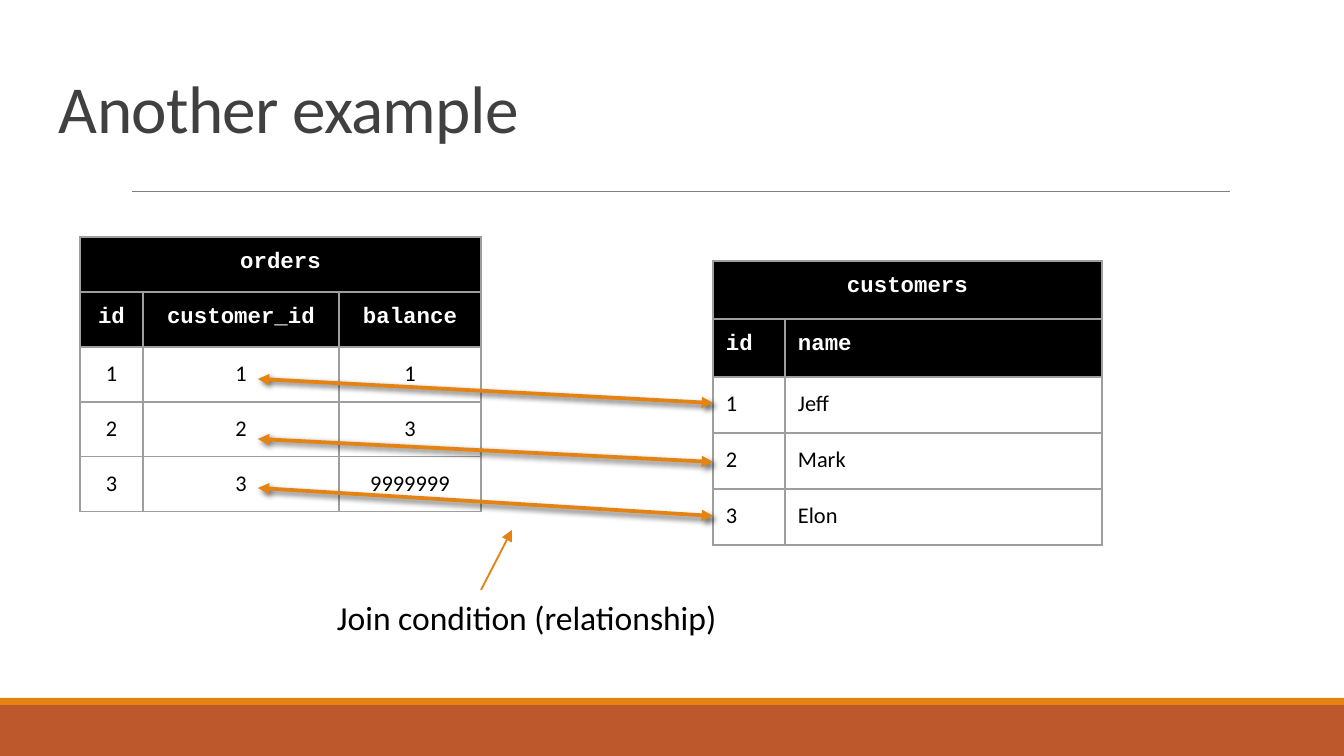
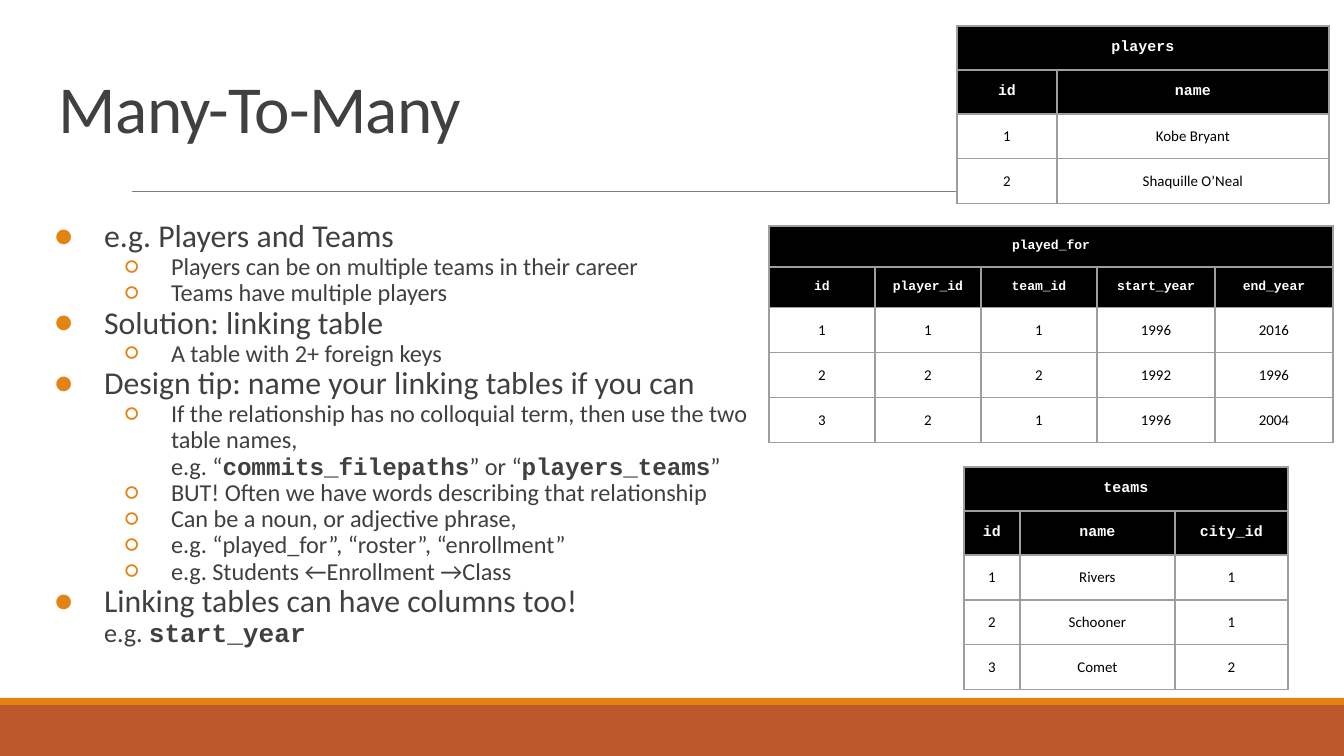
"""Build two slides on joining tables and many-to-many relationships."""
from lxml import etree
from pptx import Presentation
from pptx import util as u
from pptx.dml.color import RGBColor
from pptx.enum import shapes, text
from pptx.oxml import ns

BLACK = RGBColor(0x00, 0x00, 0x00)
WHITE = RGBColor(0xFF, 0xFF, 0xFF)
INK = RGBColor(0x40, 0x40, 0x40)
GRAY = RGBColor(0x80, 0x80, 0x80)
BORDER = RGBColor(0x9E, 0x9E, 0x9E)
ORANGE = RGBColor(0xE4, 0x83, 0x12)
RUST = RGBColor(0xBD, 0x58, 0x2C)

WIDTH, HEIGHT, INSET = 1344, 756, 13
PLAIN = {"name": "Calibri", "bold": False}
CODE = {"name": "Courier New", "bold": True}
TITLE_ONLY, TITLE_AND_BODY = 5, 1
BULLETS = [
    {"char": "●", "margin": 67, "indent": -50, "sizes": (17, 14)},
    {"char": "○", "margin": 134, "indent": -46, "sizes": (13, 13, 13)},
]


def px(length):
    return u.Emu(round(length * 914400 / 134.4))


def add(parent, tag, **attributes):
    return etree.SubElement(parent, ns.qn(tag), attributes)


def add_color(parent, color, alpha=None):
    element = add(parent, "a:srgbClr", val=str(color))
    if alpha:
        add(element, "a:alpha", val=alpha)


class Deck:
    def __init__(self):
        self.presentation = Presentation()
        self.presentation.slide_width = px(WIDTH)
        self.presentation.slide_height = px(HEIGHT)
        self.slide = None

    def place(self, shape, *box):
        for name, value in zip(("left", "top", "width", "height"), box):
            setattr(shape, name, px(value))

    def frame(self, shape, **values):
        sides = ("margin_left", "margin_right", "margin_top", "margin_bottom")
        values = {"word_wrap": True, "auto_size": text.MSO_AUTO_SIZE.NONE,
                  "vertical_anchor": text.MSO_ANCHOR.TOP,
                  **dict.fromkeys(sides, px(INSET)), **values}
        for name, value in values.items():
            setattr(shape.text_frame, name, value)
        return shape.text_frame

    def run(self, paragraph, words, style, size, color):
        run = paragraph.add_run()
        run.text = words
        for name, value in {**style, "size": u.Pt(size)}.items():
            setattr(run.font, name, value)
        run.font.color.rgb = color
        return run

    def start(self, layout, title):
        self.slide = self.presentation.slides.add_slide(
            self.presentation.slide_layouts[layout])
        self.band(705, 51, RUST)
        self.band(698, 7, ORANGE)
        self.line((132, 192), (1230, 192), GRAY, 0.5)
        shape = self.slide.shapes.title
        self.place(shape, 46, 66, 1252, 84)
        paragraph = self.frame(shape).paragraphs[0]
        paragraph.alignment = text.PP_ALIGN.LEFT
        paragraph.line_spacing = 0.85
        run = self.run(paragraph, title, PLAIN, 36, INK)
        run.font._element.set("spc", "-40")

    def band(self, top, height, color):
        shape = self.slide.shapes.add_shape(
            shapes.MSO_SHAPE.RECTANGLE, px(0), px(top), px(WIDTH), px(height))
        shape.shadow.inherit = False
        shape.fill.solid()
        shape.fill.fore_color.rgb = color
        shape.line.fill.background()

    def line(self, start, end, color, width, heads=(), shadow=False):
        connector = self.slide.shapes.add_connector(
            shapes.MSO_CONNECTOR.STRAIGHT, *map(px, start + end))
        connector.line.color.rgb = color
        connector.line.width = u.Pt(width)
        for head in heads:
            add(connector.line._get_or_add_ln(), head, type="triangle")
        effects = add(connector._element.spPr, "a:effectLst")
        if shadow:
            outer = add(effects, "a:outerShdw", blurRad=str(u.Pt(3)),
                        dist=str(u.Pt(2)), dir="2700000", rotWithShape="0")
            add_color(outer, BLACK, "60000")

    def label(self, words, *box):
        shape = self.slide.shapes.add_textbox(*map(px, box))
        frame = self.frame(shape, auto_size=text.MSO_AUTO_SIZE.SHAPE_TO_FIT_TEXT,
                           margin_top=px(7), margin_bottom=px(7))
        self.run(frame.paragraphs[0], words, PLAIN, 18, BLACK)

    def bullets(self, items, *box):
        shape = self.slide.placeholders[1]
        self.place(shape, *box)
        frame = self.frame(shape)
        for index, (level, words) in enumerate(items):
            paragraph = frame.add_paragraph() if index else frame.paragraphs[0]
            self.bullet(paragraph, level, words)

    def bullet(self, paragraph, level, words):
        style = BULLETS[level]
        paragraph.level = level
        paragraph.alignment = text.PP_ALIGN.LEFT
        paragraph.line_spacing = 0.9
        paragraph.space_before = u.Pt(0)
        properties = paragraph._p.get_or_add_pPr()
        properties.set("marL", str(px(style["margin"])))
        properties.set("indent", str(px(style["indent"])))
        add_color(add(properties, "a:buClr"), ORANGE)
        add(properties, "a:buFont", typeface="Calibri")
        add(properties, "a:buChar", char=style["char"])
        for row, (line, size) in enumerate(zip(words.split("\n"), style["sizes"])):
            if row:
                paragraph.add_line_break()
            for part, piece in enumerate(line.split("`")):
                if piece:
                    self.run(paragraph, piece, CODE if part % 2 else PLAIN, size, INK)

    def table(self, name, rows, left, top, columns, heights, sizes=(8, 8),
              align=text.PP_ALIGN.CENTER, fill=None):
        rows = [[name] + [""] * (len(columns) - 1)] + rows
        heights = [heights[0]] * 2 + [heights[1]] * (len(rows) - 2)
        shape = self.slide.shapes.add_table(
            len(rows), len(columns), px(left), px(top),
            px(sum(columns)), px(sum(heights)))
        table = shape.table
        table.first_row = table.horz_banding = False
        for column, width in zip(table.columns, columns):
            column.width = px(width)
        for index, (row, height) in enumerate(zip(rows, heights)):
            table.rows[index].height = px(height)
            for cell, words in zip(table.rows[index].cells, row):
                self.cell(cell, words, index < 2, sizes,
                          align if index else text.PP_ALIGN.CENTER, fill)
        table.cell(0, 0).merge(table.cell(0, len(columns) - 1))

    def cell(self, cell, words, header, sizes, align, fill):
        for side in ("left", "right", "top", "bottom"):
            setattr(cell, "margin_" + side, px(INSET))
        color = BLACK if header else fill
        if color is None:
            cell.fill.background()
        else:
            cell.fill.solid()
            cell.fill.fore_color.rgb = color
        properties = cell._tc.get_or_add_tcPr()
        for index, tag in enumerate(("a:lnL", "a:lnR", "a:lnT", "a:lnB")):
            border = add(properties, tag, w=str(u.Pt(0.75)))
            add_color(add(border, "a:solidFill"), BORDER)
            properties.insert(index, border)
        paragraph = cell.text_frame.paragraphs[0]
        paragraph.alignment = align
        if words:
            self.run(paragraph, words, CODE if header else PLAIN,
                     sizes[0] if header else sizes[1], WHITE if header else BLACK)


def join_slide(deck):
    deck.start(TITLE_ONLY, "Another example")
    deck.table("orders", [["id", "customer_id", "balance"], ["1", "1", "1"],
                          ["2", "2", "3"], ["3", "3", "9999999"]],
               80, 237, (63, 196, 142), (55, 55), (12, 12))
    deck.table("customers", [["id", "name"], ["1", "Jeff"], ["2", "Mark"],
                             ["3", "Elon"]],
               713, 261, (72, 317), (58, 56), (12, 12), text.PP_ALIGN.LEFT)
    for customer, order in ((403, 379), (462, 439), (516, 488)):
        deck.line((713, customer), (258, order), ORANGE, 2,
                  ("a:headEnd", "a:tailEnd"), shadow=True)
    deck.label("Join condition (relationship)", 324, 590, 409, 54)
    deck.line((481, 590), (512, 530), ORANGE, 1, ("a:tailEnd",))


def many_to_many_slide(deck):
    deck.start(TITLE_AND_BODY, "Many-To-Many")
    deck.bullets([
        (0, "e.g. Players and Teams"),
        (1, "Players can be on multiple teams in their career"),
        (1, "Teams have multiple players"),
        (0, "Solution: linking table"),
        (1, "A table with 2+ foreign keys"),
        (0, "Design tip: name your linking tables if you can"),
        (1, "If the relationship has no colloquial term, then use the two "
            "table names,\ne.g. “`commits_filepaths`” or “`players_teams`”"),
        (1, "BUT! Often we have words describing that relationship"),
        (1, "Can be a noun, or adjective phrase,"),
        (1, "e.g. “played_for”, “roster”, “enrollment”"),
        (1, "e.g. Students ←Enrollment →Class"),
        (0, "Linking tables can have columns too!\ne.g. `start_year`"),
    ], 24, 207, 745, 534)
    deck.table("played_for",
               [["id", "player_id", "team_id", "start_year", "end_year"],
                ["1", "1", "1", "1996", "2016"],
                ["2", "2", "2", "1992", "1996"],
                ["3", "2", "1", "1996", "2004"]],
               769, 226, (106, 106, 116, 118, 118), (41, 45), (7, 8))
    deck.table("players", [["id", "name"], ["1", "Kobe Bryant"],
                           ["2", "Shaquille O’Neal"]],
               957, 26, (100, 272), (44, 45), fill=WHITE)
    deck.table("teams", [["id", "name", "city_id"], ["1", "Rivers", "1"],
                         ["2", "Schooner", "1"], ["3", "Comet", "2"]],
               964, 467, (56, 155, 113), (44, 45))


def main():
    deck = Deck()
    join_slide(deck)
    many_to_many_slide(deck)
    deck.presentation.save("out.pptx")


if __name__ == "__main__":
    main()
